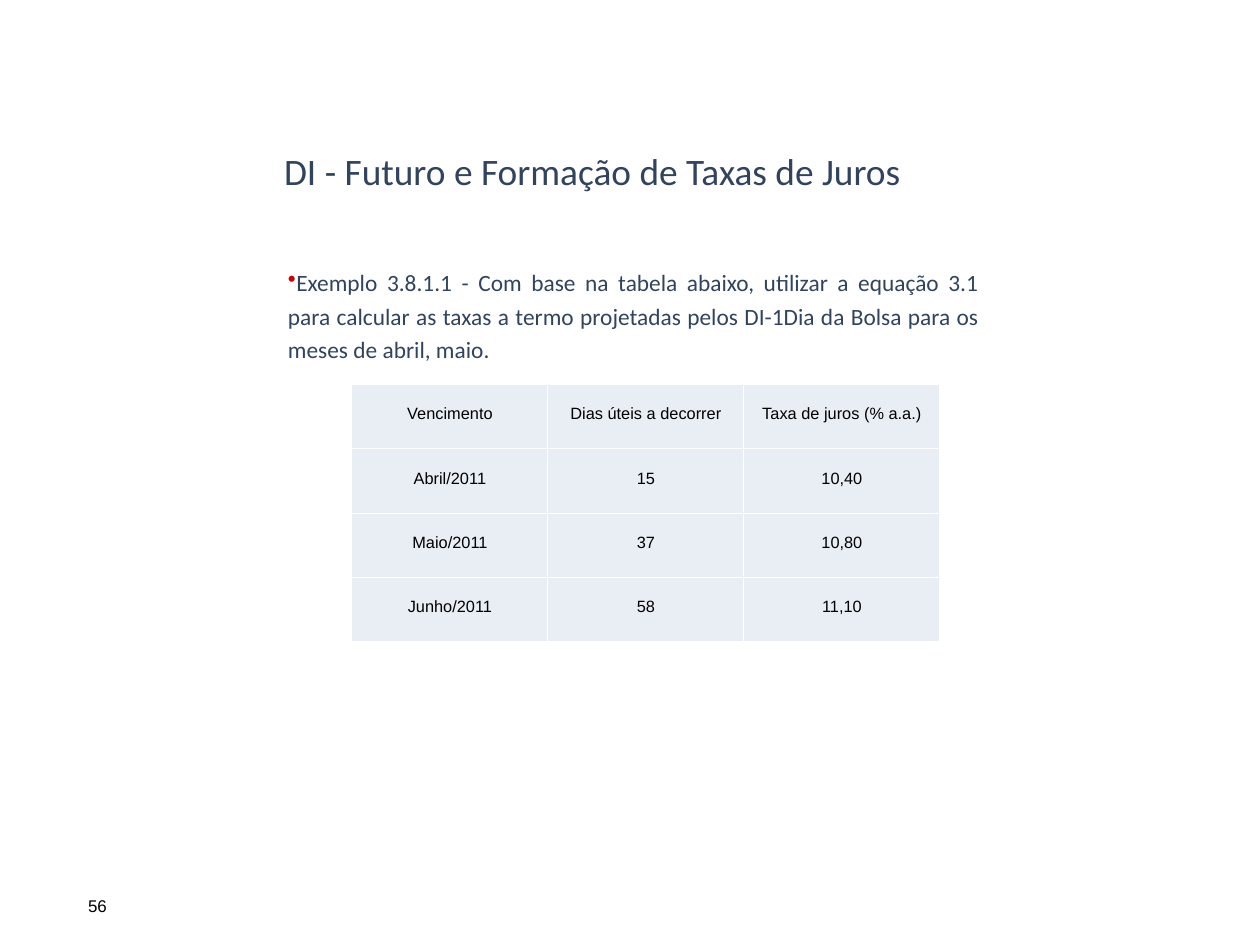
import dataclasses

import pptx
import pptx.dml.color
import pptx.enum.text
import pptx.oxml.ns
import pptx.util
from lxml import etree

Inches = pptx.util.Inches
Pt = pptx.util.Pt
ALIGN = pptx.enum.text.PP_ALIGN
ANCHOR = pptx.enum.text.MSO_ANCHOR


@dataclasses.dataclass(frozen=True)
class Theme:
    heading_font: str = "Calibri"
    data_font: str = "Arial"
    navy: str = "30435F"
    black: str = "000000"
    white: str = "FFFFFF"
    cell_fill: str = "E9EDF4"
    bullet_red: str = "CC0000"
    title_size: float = 32
    body_size: float = 20
    table_size: float = 14
    number_size: float = 14.5


def add_xml(parent, tag, **attributes):
    return etree.SubElement(parent, pptx.oxml.ns.qn(tag), attributes)


class SlideBuilder:
    def __init__(self, slide, theme):
        self.slide = slide
        self.theme = theme

    def format_text(self, paragraph, font_name, size, color, align):
        paragraph.alignment = align
        for run in paragraph.runs:
            run.font.name = font_name
            run.font.size = Pt(size)
            run.font.color.rgb = pptx.dml.color.RGBColor.from_string(color)

    def place_title(self, text, left, top, width, height):
        title = self.slide.shapes.title
        title.left, title.top = Inches(left), Inches(top)
        title.width, title.height = Inches(width), Inches(height)
        title.text_frame.text = text
        title.text_frame.vertical_anchor = ANCHOR.TOP
        self.format_text(title.text_frame.paragraphs[0], self.theme.heading_font,
                         self.theme.title_size, self.theme.navy, ALIGN.CENTER)

    def add_text(self, text, left, top, width, height):
        box = self.slide.shapes.add_textbox(
            Inches(left), Inches(top), Inches(width), Inches(height))
        box.text_frame.word_wrap = True
        box.text_frame.text = text
        return box.text_frame.paragraphs[0]

    def add_bullet(self, text, left, top, width, height):
        paragraph = self.add_text(text, left, top, width, height)
        properties = paragraph._p.get_or_add_pPr()
        properties.set("marL", "0")
        properties.set("indent", "0")
        bullet_color = add_xml(properties, "a:buClr")
        add_xml(bullet_color, "a:srgbClr", val=self.theme.bullet_red)
        add_xml(properties, "a:buChar", char="•")
        paragraph.line_spacing = 1.2
        self.format_text(paragraph, self.theme.heading_font,
                         self.theme.body_size, self.theme.navy, ALIGN.JUSTIFY)

    def add_page_number(self, text, left, top, width, height):
        paragraph = self.add_text(text, left, top, width, height)
        self.format_text(paragraph, self.theme.data_font,
                         self.theme.number_size, self.theme.black, ALIGN.LEFT)

    def add_table(self, rows, left, top, width, height):
        table = self.slide.shapes.add_table(
            len(rows), len(rows[0]), Inches(left), Inches(top),
            Inches(width), Inches(height)).table
        for row_index, values in enumerate(rows):
            for column_index, value in enumerate(values):
                self.format_cell(table.cell(row_index, column_index), value)

    def format_cell(self, cell, value):
        cell.text_frame.text = value
        cell.vertical_anchor = ANCHOR.MIDDLE
        cell.margin_left = cell.margin_right = Inches(0.05)
        cell.margin_top = cell.margin_bottom = 0
        paragraph = cell.text_frame.paragraphs[0]
        paragraph.line_spacing = Pt(11)
        self.format_text(paragraph, self.theme.data_font,
                         self.theme.table_size, self.theme.black, ALIGN.CENTER)
        # Thin white borders go before the fill
        properties = cell._tc.get_or_add_tcPr()
        for side in ("a:lnL", "a:lnR", "a:lnT", "a:lnB"):
            line_fill = add_xml(add_xml(properties, side, w=str(Pt(1))), "a:solidFill")
            add_xml(line_fill, "a:srgbClr", val=self.theme.white)
        cell.fill.solid()
        cell.fill.fore_color.rgb = pptx.dml.color.RGBColor.from_string(
            self.theme.cell_fill)


def main():
    deck = pptx.Presentation()
    deck.slide_width, deck.slide_height = Inches(15), Inches(11.25)
    title_only = deck.slide_layouts[5]
    builder = SlideBuilder(deck.slides.add_slide(title_only), Theme())

    # Page number
    builder.add_page_number("56", 0.95, 10.61, 0.83, 0.35)

    # Rates by maturity
    rates = [
        ("Vencimento", "Dias úteis a decorrer", "Taxa de juros (% a.a.)"),
        ("Abril/2011", "15", "10,40"),
        ("Maio/2011", "37", "10,80"),
        ("Junho/2011", "58", "11,10"),
    ]
    builder.add_table(rates, 4.19, 4.58, 7, 3.06)

    # Exercise statement
    builder.add_bullet(
        "Exemplo 3.8.1.1 - Com base na tabela abaixo, utilizar a equação 3.1 "
        "para calcular as taxas a termo projetadas pelos DI-1Dia da Bolsa "
        "para os meses de abril, maio.", 3.33, 3.08, 8.42, 1.86)

    # Title
    builder.place_title("DI - Futuro e Formação de Taxas de Juros",
                        2.48, 1.71, 9.15, 1.19)

    deck.save("out.pptx")


if __name__ == "__main__":
    main()
